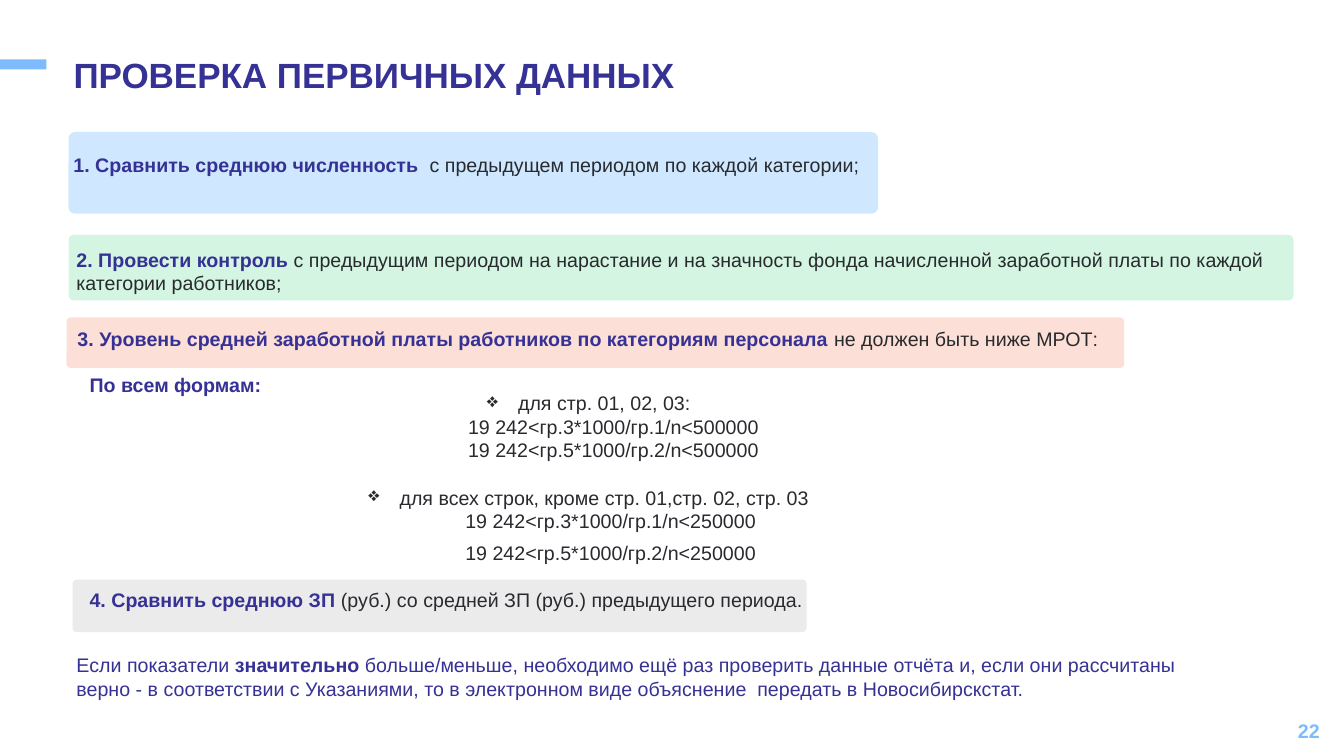
from dataclasses import dataclass

from lxml import etree
from pptx import Presentation
from pptx.dml.color import RGBColor
from pptx.enum import shapes, text
from pptx.oxml.ns import qn
from pptx.util import Emu, Pt

PX = 9144  # 100 px to the inch
COLORS = {
    "accent": "7DBBFC",
    "heading": "363194",
    "body": "282A2E",
    "blue": "CFE8FF",
    "green": "D3F5E2",
    "red": "FCDFD7",
    "gray": "EBEBEB",
}


@dataclass
class Panel:
    box: tuple[int, int, int, int]
    color: str
    kind: shapes.MSO_SHAPE = shapes.MSO_SHAPE.ROUNDED_RECTANGLE


@dataclass
class Run:
    text: str
    color: str = "body"
    bold: bool = False
    size: int = 14


@dataclass
class Label:
    box: tuple[int, int, int, int]
    runs: list[Run]
    middle: bool = False
    wrap: bool = True
    fit: bool = True
    inset: tuple[int, int] = (10, 5)
    line_spacing: float = 1.0
    align: text.PP_ALIGN = text.PP_ALIGN.LEFT


@dataclass
class Rule:
    text: str
    bullet: bool = False
    space_before: int = 0


PANELS = [
    Panel((0, 59, 46, 10), "accent", shapes.MSO_SHAPE.RECTANGLE),
    Panel((68, 131, 803, 81), "blue"),
    Panel((68, 233, 1215, 65), "green"),
    Panel((66, 315, 1049, 50), "red"),
    Panel((72, 575, 728, 52), "gray"),
]

LABELS = [
    Label((62, 52, 886, 57), [Run("ПРОВЕРКА ПЕРВИЧНЫХ ДАННЫХ", "heading", True, 25)],
          fit=False, inset=(11, 6), line_spacing=0.9),
    Label((63, 147, 989, 34), [
        Run("1. Сравнить среднюю численность  ", "heading", True),
        Run("с предыдущем периодом по каждой категории;")]),
    Label((66, 241, 1223, 57), [
        Run("2. Провести контроль ", "heading", True),
        Run("с предыдущим периодом на нарастание и на значность фонда "
            "начисленной заработной платы по каждой категории работников;")]),
    Label((67, 319, 1215, 34), [
        Run("3. Уровень средней заработной платы работников по категориям персонала ",
            "heading", True),
        Run("не должен быть ниже МРОТ:")], middle=True),
    Label((79, 365, 197, 34), [Run("По всем формам:", "heading", True)], wrap=False),
    Label((79, 578, 737, 34), [
        Run("4. Сравнить среднюю ЗП ", "heading", True),
        Run("(руб.) со средней ЗП (руб.) предыдущего периода.")]),
    Label((66, 643, 1168, 57), [
        Run("Если показатели ", "heading"),
        Run("значительно", "heading", True),
        Run(" больше/меньше, необходимо ещё раз проверить данные отчёта и, если они "
            "рассчитаны верно - в соответствии с Указаниями, то в электронном виде "
            "объяснение  передать в Новосибирскстат.", "heading")]),
    Label((1020, 705, 300, 40), [Run("22", "accent", True)], middle=True, fit=False,
          inset=(11, 6), align=text.PP_ALIGN.RIGHT),
]

RULES_BOX = (251, 383, 666, 185)
RULES = [
    Rule("для стр. 01, 02, 03:", bullet=True),
    Rule("19 242<гр.3*1000/гр.1/n<500000"),
    Rule("19 242<гр.5*1000/гр.2/n<500000"),
    Rule("для всех строк, кроме стр. 01,стр. 02, стр. 03", bullet=True, space_before=17),
    Rule("19 242<гр.3*1000/гр.1/n<250000 "),
    Rule("19 242<гр.5*1000/гр.2/n<250000 ", space_before=6),
]


def to_emu(box: tuple[int, ...]) -> list[Emu]:
    return [Emu(value * PX) for value in box]


def rgb(name: str) -> RGBColor:
    return RGBColor.from_string(COLORS[name])


def format_run(run, style: Run) -> None:
    run.font.name = "Arial"
    run.font.size = Pt(style.size)
    run.font.bold = style.bold
    run.font.color.rgb = rgb(style.color)


def draw_panel(slide, panel: Panel) -> None:
    shape = slide.shapes.add_shape(panel.kind, *to_emu(panel.box))
    shape.shadow.inherit = False
    shape.fill.solid()
    shape.fill.fore_color.rgb = rgb(panel.color)
    shape.line.fill.background()
    if panel.kind == shapes.MSO_SHAPE.ROUNDED_RECTANGLE:
        shape.adjustments[0] = 0.08


def add_frame(slide, box: tuple[int, int, int, int], wrap: bool = True, fit: bool = True):
    frame = slide.shapes.add_textbox(*to_emu(box)).text_frame
    frame.word_wrap = wrap
    if fit:
        frame.auto_size = text.MSO_AUTO_SIZE.SHAPE_TO_FIT_TEXT
    return frame


def draw_label(slide, label: Label) -> None:
    frame = add_frame(slide, label.box, label.wrap, label.fit)
    side, edge = to_emu(label.inset)
    frame.margin_left = frame.margin_right = side
    frame.margin_top = frame.margin_bottom = edge
    if label.middle:
        frame.vertical_anchor = text.MSO_ANCHOR.MIDDLE
    paragraph = frame.paragraphs[0]
    paragraph.alignment = label.align
    paragraph.line_spacing = label.line_spacing
    for style in label.runs:
        run = paragraph.add_run()
        run.text = style.text
        format_run(run, style)


def draw_rules(slide) -> None:
    frame = add_frame(slide, RULES_BOX)
    frame.text = "\n".join(rule.text for rule in RULES)
    for paragraph, rule in zip(frame.paragraphs, RULES):
        paragraph.alignment = text.PP_ALIGN.CENTER
        if rule.space_before:
            paragraph.space_before = Pt(rule.space_before)
        margin, indent = (31, -31) if rule.bullet else (0, 49)
        properties = paragraph._p.get_or_add_pPr()
        properties.set("marL", str(margin * PX))
        properties.set("indent", str(indent * PX))
        if rule.bullet:
            etree.SubElement(properties, qn("a:buChar")).set("char", "❖")
        format_run(paragraph.runs[0], Run(rule.text))


def main() -> None:
    presentation = Presentation()
    presentation.slide_width, presentation.slide_height = to_emu((1333, 750))
    slide = presentation.slides.add_slide(presentation.slide_layouts[6])

    # Accent bar and coloured panels
    for panel in PANELS:
        draw_panel(slide, panel)

    # Title, steps, closing note and page number
    for label in LABELS:
        draw_label(slide, label)

    # Wage limits by row
    draw_rules(slide)

    presentation.save("out.pptx")


if __name__ == "__main__":
    main()
